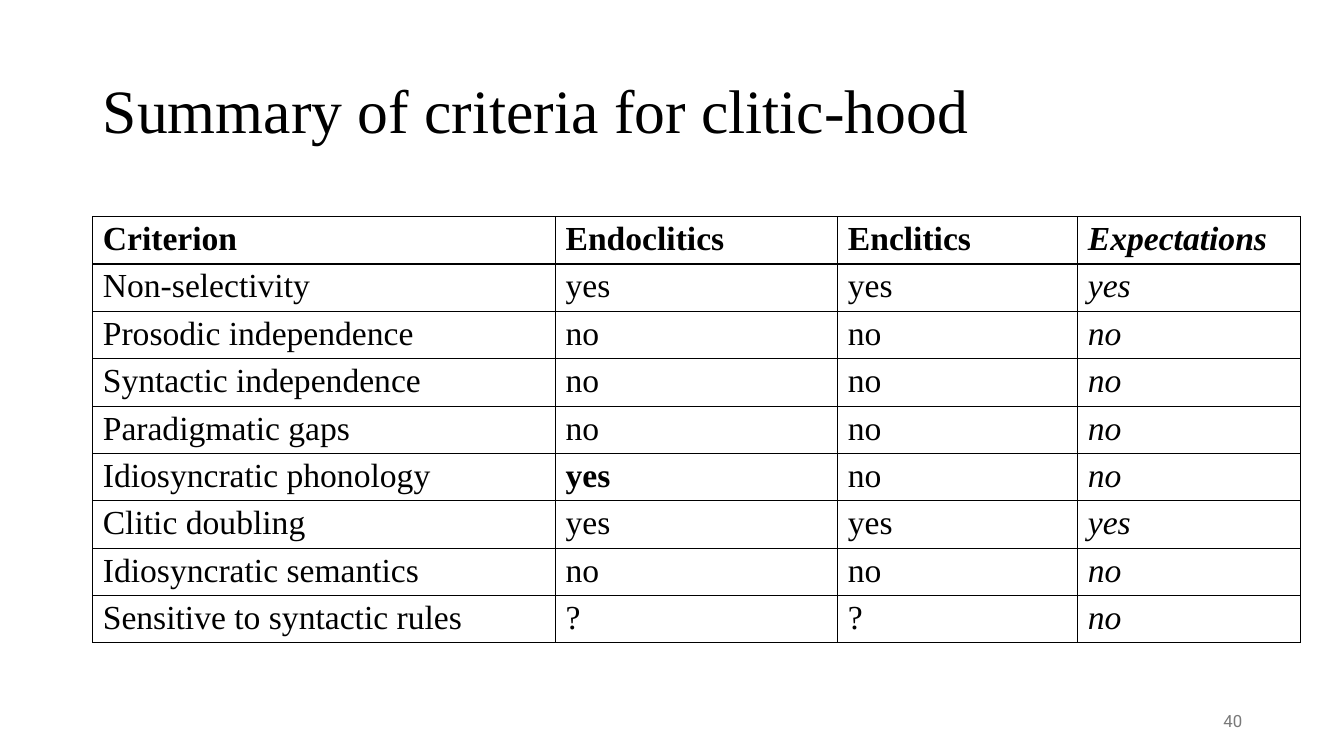
from lxml import etree
from pptx import Presentation
from pptx.dml.color import RGBColor
from pptx.enum.text import MSO_ANCHOR, PP_ALIGN
from pptx.oxml.ns import qn
from pptx.util import Inches, Pt

MIDDLE = MSO_ANCHOR.MIDDLE
LEFT, RIGHT = PP_ALIGN.LEFT, PP_ALIGN.RIGHT
BLACK = RGBColor(0x00, 0x00, 0x00)
GRAY = RGBColor(0x79, 0x79, 0x79)
SERIF = "Times New Roman"

# Content
TITLE = "Summary of criteria for clitic-hood"
SLIDE_NUMBER = "40"
CRITERIA = [
    ("Criterion", "Endoclitics", "Enclitics", "Expectations"),
    ("Non-selectivity", "yes", "yes", "yes"),
    ("Prosodic independence", "no", "no", "no"),
    ("Syntactic independence", "no", "no", "no"),
    ("Paradigmatic gaps", "no", "no", "no"),
    ("Idiosyncratic phonology", "yes", "no", "no"),
    ("Clitic doubling", "yes", "yes", "yes"),
    ("Idiosyncratic semantics", "no", "no", "no"),
    ("Sensitive to syntactic rules", "?", "?", "no"),
]
EMPHASIZED = ("Idiosyncratic phonology", 1)  # row label, column

# Layout
COLUMN_WIDTHS = [4.59, 2.8, 2.38, 2.21]
ROW_HEIGHT = 0.47
TABLE_LEFT, TABLE_TOP = 0.92, 2.15
EXPECTATIONS_COLUMN = 3

# Formats
TITLE_FONT = {"name": SERIF, "size": Pt(44), "bold": False}
CELL_FONT = {"name": SERIF, "size": Pt(24)}
NUMBER_FONT = {"name": "Roboto", "size": Pt(12)}
CELL_FORMAT = {
    "margin_left": Inches(0.1), "margin_right": Inches(0.1),
    "margin_top": Inches(0.04), "margin_bottom": Inches(0.04),
}


def set_attributes(target, values):
    for name, value in values.items():
        setattr(target, name, value)


def write(text_frame, text, font, color, alignment=LEFT):
    paragraph = text_frame.paragraphs[0]
    paragraph.alignment = alignment
    run = paragraph.add_run()
    run.text = text
    set_attributes(run.font, font)
    run.font.color.rgb = color
    return paragraph


def add_borders(cell):
    properties = cell._tc.get_or_add_tcPr()
    for side in ("a:lnL", "a:lnR", "a:lnT", "a:lnB"):
        line = etree.SubElement(properties, qn(side), w=str(Pt(1)))
        fill = etree.SubElement(line, qn("a:solidFill"))
        etree.SubElement(fill, qn("a:srgbClr"), val=str(BLACK))


def add_title(slide):
    title = slide.shapes.title
    set_attributes(title, {
        "left": Inches(0.92), "top": Inches(0.4),
        "width": Inches(11.5), "height": Inches(1.45),
    })
    title.text_frame.vertical_anchor = MIDDLE
    paragraph = write(title.text_frame, TITLE, TITLE_FONT, BLACK)
    paragraph.line_spacing = 0.9


def add_criteria_table(slide):
    table = slide.shapes.add_table(
        len(CRITERIA), len(COLUMN_WIDTHS), Inches(TABLE_LEFT), Inches(TABLE_TOP),
        Inches(sum(COLUMN_WIDTHS)), Inches(ROW_HEIGHT * len(CRITERIA)),
    ).table
    set_attributes(table, {"first_row": False, "horz_banding": False})
    for column, width in zip(table.columns, COLUMN_WIDTHS):
        column.width = Inches(width)
    for row_index, values in enumerate(CRITERIA):
        table.rows[row_index].height = Inches(ROW_HEIGHT)
        for column_index, text in enumerate(values):
            cell = table.cell(row_index, column_index)
            set_attributes(cell, CELL_FORMAT)
            add_borders(cell)
            cell.fill.background()
            emphasized = (values[0], column_index) == EMPHASIZED
            style = {
                "bold": row_index == 0 or emphasized,
                "italic": column_index == EXPECTATIONS_COLUMN,
            }
            write(cell.text_frame, text, {**CELL_FONT, **style}, BLACK)


def add_slide_number(slide):
    box = slide.shapes.add_textbox(Inches(9.42), Inches(6.95), Inches(3), Inches(0.4))
    set_attributes(box.text_frame, {"word_wrap": True, "vertical_anchor": MIDDLE})
    write(box.text_frame, SLIDE_NUMBER, NUMBER_FONT, GRAY, RIGHT)


def main():
    presentation = Presentation()
    presentation.slide_width = Inches(13.33)
    presentation.slide_height = Inches(7.5)
    slide = presentation.slides.add_slide(presentation.slide_layouts[5])
    add_title(slide)
    add_criteria_table(slide)
    add_slide_number(slide)
    presentation.save("out.pptx")


if __name__ == "__main__":
    main()
